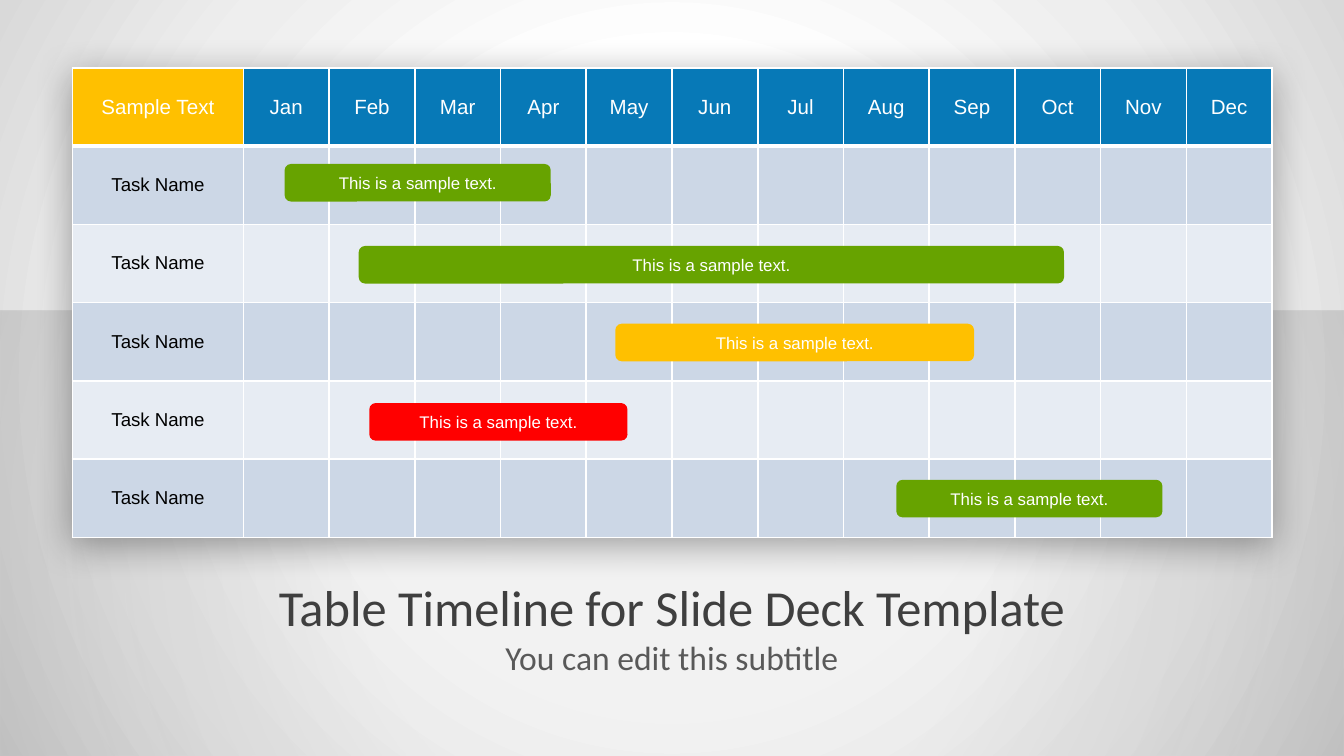
from lxml import etree
from pptx import Presentation, util as u
from pptx.dml.color import RGBColor
from pptx.enum import shapes, text
from pptx.oxml import ns

# Content
MONTHS = "Jan Feb Mar Apr May Jun Jul Aug Sep Oct Nov Dec".split()
HEAD = ["Sample Text"] + MONTHS
TASKS = ["Task Name"] * 5
NOTE = "This is a sample text."
GREEN, GOLD, RED, WHITE = "67A300", "FFC000", "FF0000", "FFFFFF"
BARS = [  # left, top, width, colour
    (5.38, 3.1, 5.03, GREEN),
    (6.78, 4.65, 13.33, GREEN),
    (11.63, 6.12, 6.78, GOLD),
    (6.98, 7.62, 4.88, RED),
    (16.94, 9.07, 5.03, GREEN),
]
TITLES = [  # words, box, size, colour, anchor, space before
    ("Table Timeline for Slide Deck Template", (1.9, 10.82, 21.6, 1.27),
     27, "3F3F3F", text.MSO_ANCHOR.MIDDLE, 0),
    ("You can edit this subtitle", (3.81, 11.91, 17.78, 1.6),
     18, "595959", text.MSO_ANCHOR.TOP, 3.6),
]
BACK = [(0, WHITE, 100), (41, WHITE, 100), (72, "EEEEEE", 100), (100, "D9D9D9", 100)]
FLOOR = [(0, "CBCBCB", 22), (44, "CBCBCB", 22), (100, "5F5F5F", 19)]

# Layout
WIDE, HIGH, HALF = 25.4, 14.29, 5.87
LEFT, TOP, NAME, MONTH, ROW, BAR = 1.37, 1.28, 3.23, 1.62, 1.48, 0.71


def rgb(code):
    return RGBColor.from_string(code)


def box(vals):
    return [u.Cm(v) for v in vals]


def node(xml):
    return etree.fromstring(xml.replace(">", f' xmlns:a="{ns.nsdecls("a").split(chr(34))[1]}">', 1))


def write(frame, words, size, code, font="Arial"):
    par = frame.paragraphs[0]
    par.alignment = text.PP_ALIGN.CENTER
    run = par.add_run()
    run.text = words
    run.font.size, run.font.name, run.font.bold = u.Pt(size), font, False
    run.font.color.rgb = rgb(code)
    return par


def radial(fill, root, stops):
    """Turn a fill into a circular gradient around the centre."""
    fill.gradient()
    old = next(root.iter(ns.qn("a:gradFill")))
    marks = "".join(
        f'<a:gs pos="{p * 1000}"><a:srgbClr val="{c}"><a:alpha val="{a * 1000}"/>'
        "</a:srgbClr></a:gs>" for p, c, a in stops)
    new = node(
        f'<a:gradFill rotWithShape="1"><a:gsLst>{marks}</a:gsLst><a:path path="circle">'
        '<a:fillToRect l="50000" t="50000" r="50000" b="50000"/></a:path></a:gradFill>')
    old.getparent().replace(old, new)


def edge(cell, row):
    """White rules, with a thick one below the header."""
    thick = {"T": row == 1, "B": row == 0}
    for side in "LRTB":
        wide = u.Pt(3 if thick.get(side) else 1)
        cell._tc.get_or_add_tcPr().append(node(
            f'<a:ln{side} w="{wide}"><a:solidFill><a:srgbClr val="{WHITE}"/>'
            f"</a:solidFill></a:ln{side}>"))


def tint(row, col):
    if row == 0:
        return "0779B7" if col else GOLD
    return "CCD7E6" if row % 2 else "E7ECF3"


deck = Presentation()
deck.slide_width, deck.slide_height = box((WIDE, HIGH))
slide = deck.slides.add_slide(deck.slide_layouts[6])
items = slide.shapes

# Backdrop and floor
radial(slide.background.fill, slide._element, BACK)
floor = items.add_shape(shapes.MSO_SHAPE.RECTANGLE, *box((0, HALF, WIDE, HIGH - HALF)))
floor.shadow.inherit = False
floor.line.fill.background()
radial(floor.fill, floor._element, FLOOR)

# Titles
for words, area, size, code, anchor, gap in TITLES:
    frame = items.add_textbox(*box(area)).text_frame
    frame.word_wrap = True
    frame.vertical_anchor = anchor
    write(frame, words, size, code, "Calibri").space_before = u.Pt(gap)

# Month table
rows, cols = len(TASKS) + 1, len(HEAD)
size = (NAME + MONTH * len(MONTHS), ROW * rows)
table = items.add_table(rows, cols, *box((LEFT, TOP, *size))).table
table.first_row = table.horz_banding = False
table._tbl.tblPr.insert(0, node(
    '<a:effectLst><a:outerShdw blurRad="254000" dist="50800" dir="5400000">'
    '<a:srgbClr val="000000"><a:alpha val="35000"/></a:srgbClr>'
    "</a:outerShdw></a:effectLst>"))
for col in range(cols):
    table.columns[col].width = u.Cm(MONTH if col else NAME)
for row in range(rows):
    table.rows[row].height = u.Cm(ROW)
    for col in range(cols):
        cell = table.cell(row, col)
        edge(cell, row)
        cell.fill.solid()
        cell.fill.fore_color.rgb = rgb(tint(row, col))
        cell.vertical_anchor = text.MSO_ANCHOR.MIDDLE
        if row == 0:
            cell.margin_left = cell.margin_right = u.Cm(0.1)
            write(cell.text_frame, HEAD[col], 11, WHITE)
        elif col == 0:
            write(cell.text_frame, TASKS[row - 1], 10, "000000")

# Task bars
for left, top, wide, code in BARS:
    bar = items.add_shape(shapes.MSO_SHAPE.ROUNDED_RECTANGLE, *box((left, top, wide, BAR)))
    bar.shadow.inherit = False
    bar.fill.solid()
    bar.fill.fore_color.rgb = rgb(code)
    bar.line.fill.background()
    bar.text_frame.vertical_anchor = text.MSO_ANCHOR.MIDDLE
    write(bar.text_frame, NOTE, 9, WHITE)

deck.save("out.pptx")
